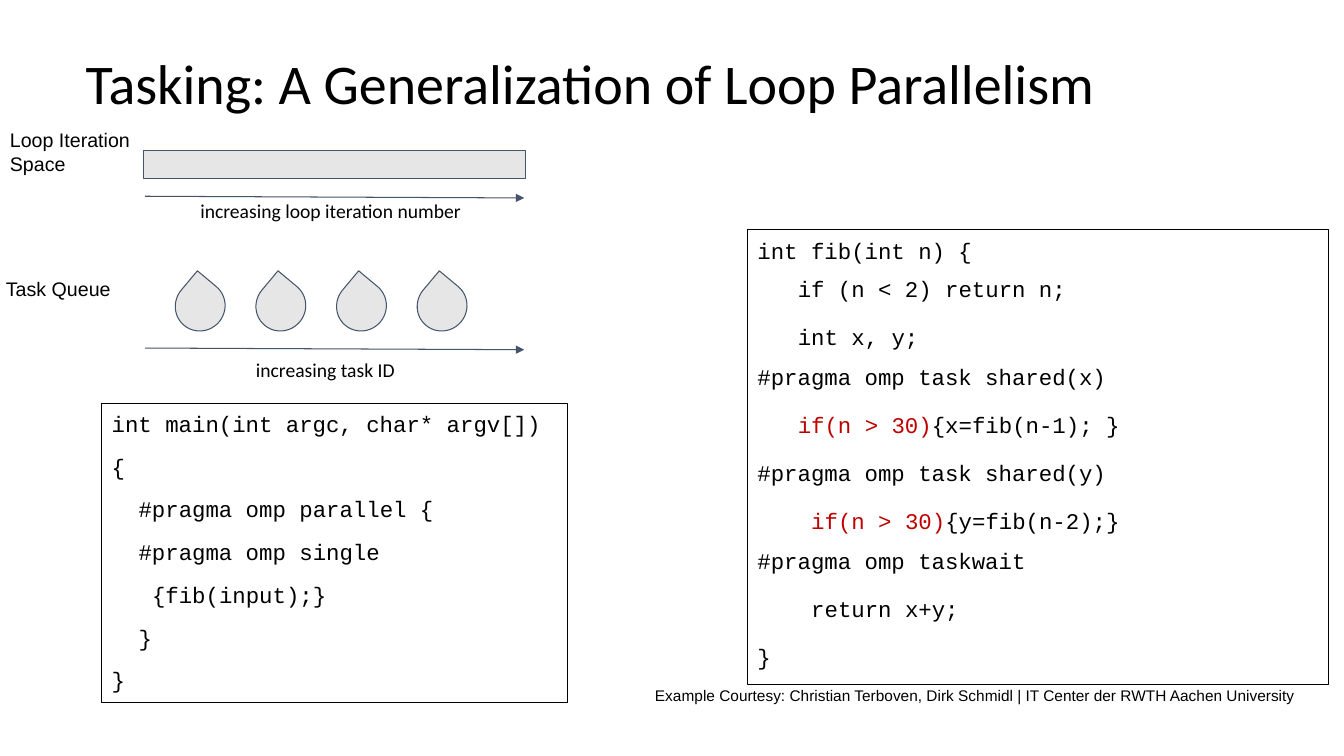
from lxml.etree import SubElement
from pptx import Presentation
from pptx.dml.color import RGBColor
from pptx.enum.shapes import MSO_CONNECTOR as Connector, MSO_SHAPE as Shape
from pptx.enum.text import MSO_ANCHOR as Anchor, MSO_AUTO_SIZE as AutoSize, PP_ALIGN as Align
from pptx.oxml.ns import qn
from pptx.util import Pt

COLORS = {"text": "000000", "guard": "C00000", "fill": "E7E6E6", "line": "44546A"}
CODE_SIZE = 16
CODE_CHAR_WIDTH = 0.6 * CODE_SIZE
GUARD = "if(n > 30)"

# Each line of code: text, line spacing, space before
MAIN_CODE = [(text, 1.07, 10) for text in (
    "int main(int argc, char* argv[])",
    "{",
    "  #pragma omp parallel {",
    "  #pragma omp single",
    "   {fib(input);}",
    "  }",
    "}",
)]
FIB_CODE = [
    ("int fib(int n) {", 0.9, 10),
    ("   if (n < 2) return n;", 0.9, 10),
    ("   int x, y;", 1.15, 12),
    ("#pragma omp task shared(x)", 0.9, 12),
    ("   if(n > 30){x=fib(n-1); }", 1.15, 12),
    ("#pragma omp task shared(y)", 1.15, 12),
    ("    if(n > 30){y=fib(n-2);}", 1.15, 12),
    ("#pragma omp taskwait", 0.9, 12),
    ("    return x+y;", 1.15, 12),
    ("}", 1.15, 12),
]


def rgb(name):
    return RGBColor.from_string(COLORS[name])


class SlideBuilder:
    def __init__(self, slide):
        self.slide = slide

    def style_run(self, run, font, size, color="text"):
        run.font.name = font
        run.font.size = Pt(size)
        run.font.color.rgb = rgb(color)

    def style_line(self, line, color):
        line.color.rgb = rgb(color)
        line.width = Pt(0.75)

    def set_frame(self, frame, inset_y):
        frame.word_wrap = True
        frame.auto_size = AutoSize.NONE
        frame.margin_left = frame.margin_right = Pt(7.2)
        frame.margin_top = frame.margin_bottom = Pt(inset_y)

    def title(self, text, left, top, width, height):
        title = self.slide.shapes.title
        title.left, title.top, title.width, title.height = map(Pt, (left, top, width, height))
        frame = title.text_frame
        frame.text = text
        self.set_frame(frame, 3.6)
        frame.vertical_anchor = Anchor.MIDDLE
        paragraph = frame.paragraphs[0]
        paragraph.alignment = Align.LEFT
        paragraph.line_spacing = 0.9
        self.style_run(paragraph.runs[0], "Calibri", 40)

    def label(self, text, left, top, width, height, font="Arial", size=14):
        box = self.slide.shapes.add_textbox(*map(Pt, (left, top, width, height)))
        frame = box.text_frame
        frame.text = text
        self.set_frame(frame, 7.2)
        self.style_run(frame.paragraphs[0].runs[0], font, size)
        return frame.paragraphs[0]

    def code_box(self, lines, left, top, width, height, inset_y):
        """Leading spaces of a code line become its paragraph indent."""
        box = self.slide.shapes.add_textbox(*map(Pt, (left, top, width, height)))
        self.style_line(box.line, "text")
        frame = box.text_frame
        self.set_frame(frame, inset_y)
        for index, (text, spacing, before) in enumerate(lines):
            paragraph = frame.add_paragraph() if index else frame.paragraphs[0]
            paragraph.line_spacing = spacing
            paragraph.space_before = Pt(before)
            code = text.lstrip()
            indent = (len(text) - len(code)) * CODE_CHAR_WIDTH
            properties = paragraph._p.get_or_add_pPr()
            properties.set("marL", str(int(Pt(indent))))
            properties.set("indent", "0")
            parts = [(code, "text")]
            if code.startswith(GUARD):
                parts = [(GUARD, "guard"), (code[len(GUARD):], "text")]
            for part, color in parts:
                run = paragraph.add_run()
                run.text = part
                self.style_run(run, "Courier New", CODE_SIZE, color)

    def shape(self, kind, left, top, width, height):
        shape = self.slide.shapes.add_shape(kind, *map(Pt, (left, top, width, height)))
        shape.shadow.inherit = False
        shape.fill.solid()
        shape.fill.fore_color.rgb = rgb("fill")
        self.style_line(shape.line, "line")
        return shape

    def arrow(self, x1, y1, x2, y2):
        arrow = self.slide.shapes.add_connector(
            Connector.STRAIGHT, *map(Pt, (x1, y1, x2, y2)))
        self.style_line(arrow.line, "line")
        SubElement(arrow.line._get_or_add_ln(), qn("a:tailEnd"), type="triangle")
        SubElement(arrow._element.spPr, qn("a:effectLst"))


def main():
    presentation = Presentation()
    presentation.slide_width, presentation.slide_height = Pt(960), Pt(540)
    slide = presentation.slides.add_slide(presentation.slide_layouts[5])
    builder = SlideBuilder(slide)

    builder.title("Tasking: A Generalization of Loop Parallelism", 54, 28.8, 840, 66)
    builder.code_box(MAIN_CODE, 72.7, 288, 332.6, 213.8, inset_y=3.6)
    builder.code_box(FIB_CODE, 534, 164, 415, 324.7, inset_y=7.2)
    courtesy = builder.label(
        "Example Courtesy: Christian Terboven, Dirk Schmidl | "
        "IT Center der RWTH Aachen University", 460.8, 481, 521.3, 66, size=11)
    courtesy.line_spacing = 1.15
    courtesy.space_before = courtesy.space_after = Pt(12)

    builder.shape(Shape.RECTANGLE, 102.2, 107.7, 273, 19.6)
    for task in range(4):
        drop = builder.shape(Shape.TEAR, 125 + 57.6 * task, 200.9, 36, 35.3)
        drop.adjustments[0] = 1
        drop.rotation = 309.9
    for y in (140.2, 248.6):
        builder.arrow(103.7, y, 374.4, y + 1.2)

    builder.label("Loop Iteration Space", 0, 84.2, 136, 34)
    builder.label("Task Queue", -2.9, 190.8, 136, 34)
    builder.label("increasing loop iteration number", 136, 134.6, 205, 15, font="Calibri")
    builder.label("increasing task ID", 175.7, 248.4, 205, 15, font="Calibri")

    presentation.save("out.pptx")


if __name__ == "__main__":
    main()
